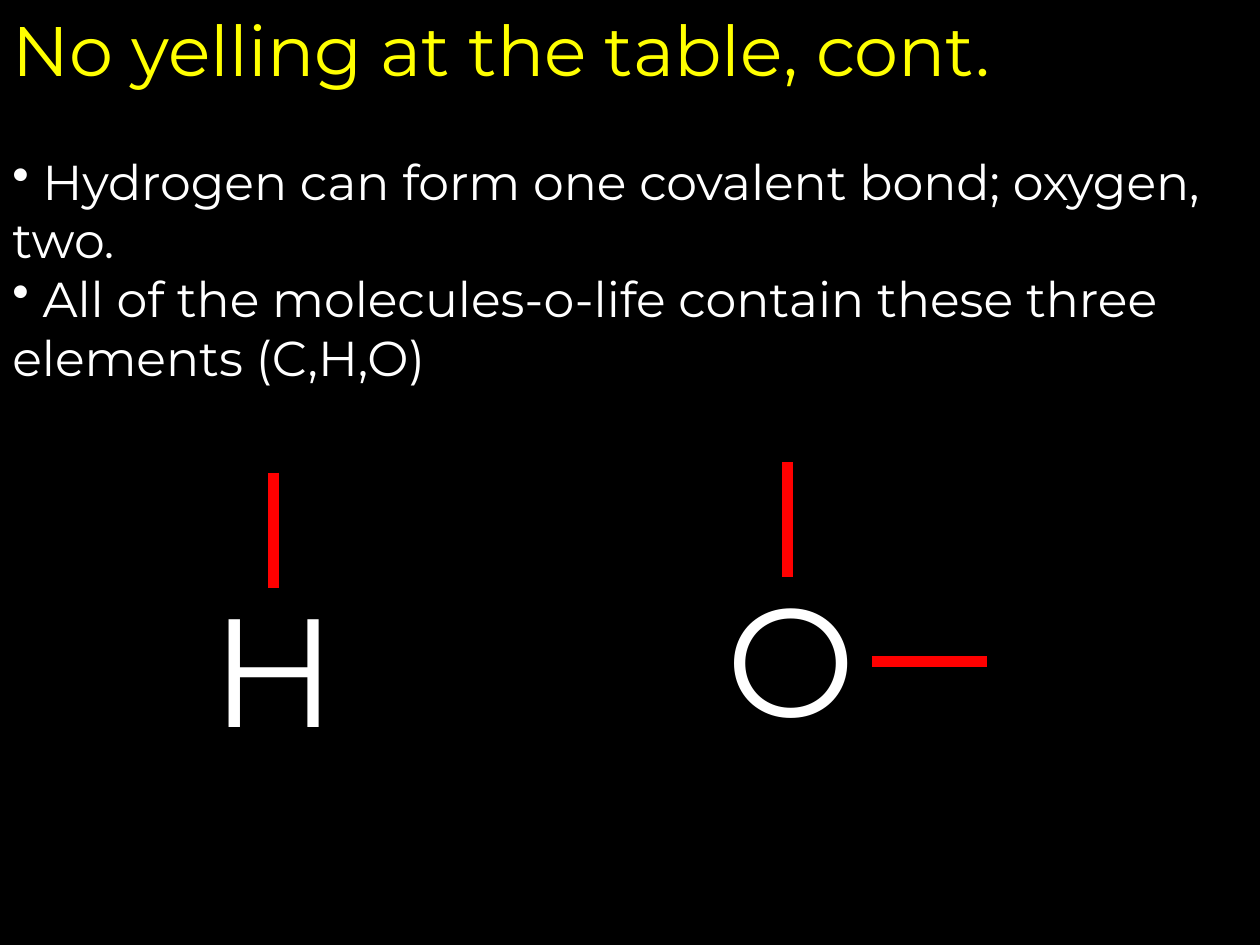
"""Build a slide on the covalent bonds of hydrogen and oxygen."""
from lxml import etree
from pptx import Presentation
from pptx.dml.color import RGBColor
from pptx.enum.shapes import MSO_CONNECTOR
from pptx.enum.text import MSO_ANCHOR, MSO_AUTO_SIZE, PP_ALIGN
from pptx.oxml.ns import qn
from pptx.util import Inches, Pt

STRAIGHT = MSO_CONNECTOR.STRAIGHT
TOP = MSO_ANCHOR.TOP
LEFT = PP_ALIGN.LEFT
NO_AUTOFIT = MSO_AUTO_SIZE.NONE

FONT = "Montserrat"
BLACK = RGBColor(0x00, 0x00, 0x00)
WHITE = RGBColor(0xFF, 0xFF, 0xFF)
YELLOW = RGBColor(0xFF, 0xFF, 0x00)
RED = RGBColor(0xFF, 0x00, 0x00)

TITLE = "No yelling at the table, cont."
POINTS = [
    " Hydrogen can form one covalent bond; oxygen, two.",
    " All of the molecules-o-life contain these three elements (C,H,O)",
]
ATOMS = [("H", 1.58, 4.5), ("O", 5.67, 4.42)]
ATOM_SIZE = (1.42, 1.58)
BONDS = [
    (2.17, 3.75, 2.17, 4.67),
    (7.83, 5.25, 6.92, 5.25),
    (6.25, 3.67, 6.25, 4.58),
]


def write(box, place, lines, size, color):
    """Place a box and fill it with formatted paragraphs."""
    box.left, box.top, box.width, box.height = map(Inches, place)
    frame = box.text_frame
    frame.text = "\n".join(lines)
    frame.word_wrap = True
    frame.auto_size = NO_AUTOFIT
    frame.vertical_anchor = TOP
    for para in frame.paragraphs:
        para.alignment = LEFT
        for span in para.runs:
            span.font.name = FONT
            span.font.size = Pt(size)
            span.font.color.rgb = color


def add_text(page, place, lines, size, color):
    """Add a text box and return it."""
    box = page.shapes.add_textbox(*map(Inches, place))
    write(box, place, lines, size, color)
    return box


def add_bullet(para):
    """Give a paragraph an inline bullet."""
    properties = para._p.get_or_add_pPr()
    properties.set("marL", "0")
    properties.set("indent", "0")
    etree.SubElement(properties, qn("a:buChar")).set("char", "•")


def add_bond(page, ends):
    """Draw one bond as a thick red line."""
    bond = page.shapes.add_connector(STRAIGHT, *map(Inches, ends))
    bond.line.color.rgb = RED
    bond.line.width = Pt(6)
    etree.SubElement(bond._element.spPr, qn("a:effectLst"))


def main():
    """Build and save the deck."""
    deck = Presentation()
    deck.slide_width, deck.slide_height = Inches(10), Inches(7.5)
    page = deck.slides.add_slide(deck.slide_layouts.get_by_name("Title Only"))
    page.background.fill.solid()
    page.background.fill.fore_color.rgb = BLACK

    write(page.shapes.title, (0, 0, 10, 0.77), [TITLE], 40, YELLOW)
    points = add_text(page, (0, 1.15, 10, 1.99), POINTS, 28, WHITE)
    for para in points.text_frame.paragraphs:
        add_bullet(para)
    for symbol, left, top in ATOMS:
        add_text(page, (left, top, *ATOM_SIZE), [symbol], 88, WHITE)
    for ends in BONDS:
        add_bond(page, ends)
    deck.save("out.pptx")


if __name__ == "__main__":
    main()
